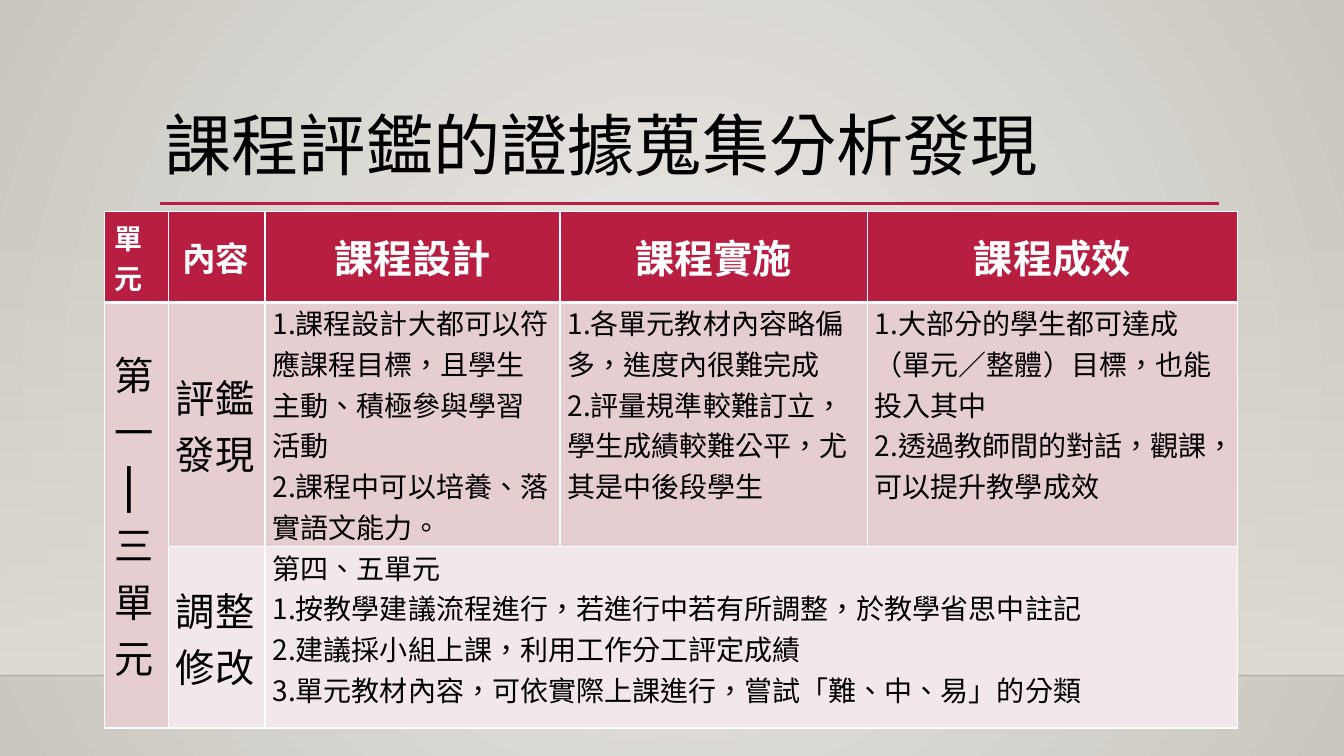
from pptx import Presentation
from pptx.dml.color import RGBColor
from pptx.enum.lang import MSO_LANGUAGE_ID
from pptx.enum.shapes import MSO_CONNECTOR, MSO_SHAPE
from pptx.enum.text import MSO_ANCHOR, PP_ALIGN
from pptx.oxml import parse_xml
from pptx.oxml.ns import nsdecls, qn
from pptx.util import Pt
from lxml.etree import SubElement

FACE = "Noto Sans CJK TC"
RED, PINK, PALE = "B71E42", "E6CDCF", "F3E8E9"


def color(code):
    return RGBColor.from_string(code)


def write(frame, lines, size, ink="000000", bold=False, align=PP_ALIGN.LEFT):
    frame.text = "\n".join(lines)
    for para in frame.paragraphs:
        para.alignment = align
        font = para.font
        font.size, font.bold, font.name = Pt(size), bold, FACE
        font.color.rgb = color(ink)
        props = para._p.pPr.find(qn("a:defRPr"))
        SubElement(props, qn("a:ea")).set("typeface", FACE)
        for run in para.runs:
            run.font.language_id = MSO_LANGUAGE_ID.TRADITIONAL_CHINESE


deck = Presentation()
deck.slide_width, deck.slide_height = Pt(960), Pt(540)
slide = deck.slides.add_slide(deck.slide_layouts[6])
shapes = slide.shapes

back = slide.background.fill
back.gradient()
for stop, code in zip(back.gradient_stops, ["ECEAE7", "CAC7C1"]):
    stop.color.rgb = color(code)
lin = next(slide.background._cSld.iter(qn("a:lin")))
lin.getparent().replace(lin, parse_xml(
    f'<a:path {nsdecls("a")} path="circle">'
    '<a:fillToRect l="50000" t="50000" r="50000" b="50000"/></a:path>'))

wall = shapes.add_shape(MSO_SHAPE.RECTANGLE, 0, Pt(159), Pt(960), Pt(323.5))
wall.shadow.inherit = False
wall.line.fill.background()
wall.fill.gradient()
wall.fill.gradient_angle = 270
for stop in wall.fill.gradient_stops:
    stop.color.rgb = color("DFDBD5")
first = next(wall._element.spPr.iter(qn("a:srgbClr")))
SubElement(first, qn("a:alpha")).set("val", "0")

for left, right, y, code, width, alpha in [
    (0, 960, 482.5, "000001", 1, 20),
    (114.5, 871, 145.5, RED, 2.5, 100),
]:
    rule = shapes.add_connector(
        MSO_CONNECTOR.STRAIGHT, Pt(left), Pt(y), Pt(right), Pt(y))
    rule.line.color.rgb = color(code)
    rule.line.width = Pt(width)
    tint = next(rule._element.spPr.iter(qn("a:srgbClr")))
    SubElement(tint, qn("a:alpha")).set("val", str(alpha * 1000))
    SubElement(rule._element.spPr, qn("a:effectLst"))

title = shapes.add_textbox(Pt(110.5), Pt(78.5), Pt(828), Pt(55.5)).text_frame
title.word_wrap = True
title.vertical_anchor = MSO_ANCHOR.MIDDLE
write(title, ["課程評鑑的證據蒐集分析發現"], 48)
title.paragraphs[0].line_spacing = 0.9

widths = [45.5, 69, 210.75, 219.5, 264.25]
heights = [65, 174.5, 129.5]
table = shapes.add_table(
    3, 5, Pt(74.75), Pt(151), Pt(sum(widths)), Pt(sum(heights))).table
for col, width in zip(table.columns, widths):
    col.width = Pt(width)
for row, height in zip(table.rows, heights):
    row.height = Pt(height)

for r, fill in enumerate([RED, PINK, PALE]):
    for c in range(5):
        cell = table.cell(r, c)
        cell.fill.solid()
        cell.fill.fore_color.rgb = color(fill)
        cell.vertical_anchor = MSO_ANCHOR.MIDDLE
        if c:
            cell.margin_left = cell.margin_right = Pt(5.4)
            cell.margin_top = cell.margin_bottom = 0
        for i, side in enumerate("LRTB"):
            thick = (r, side) in [(0, "B"), (1, "T")]
            cell._tc.tcPr.insert(i, parse_xml(
                f'<a:ln{side} {nsdecls("a")} w="{Pt(3 if thick else 1)}">'
                '<a:solidFill><a:srgbClr val="FFFFFF"/></a:solidFill>'
                f'</a:ln{side}>'))

table.cell(1, 0).merge(table.cell(2, 0))
table.cell(2, 2).merge(table.cell(2, 4))

heads = [("單元", 20), ("內容", 24), ("課程設計", 28), ("課程實施", 28), ("課程成效", 28)]
for c, (text, size) in enumerate(heads):
    align = PP_ALIGN.CENTER if c > 1 else PP_ALIGN.LEFT
    write(table.cell(0, c).text_frame, [text], size, "FFFFFF", True, align)
table.cell(0, 0).vertical_anchor = MSO_ANCHOR.TOP
table.cell(0, 1).margin_left = Pt(10)

for r, c, text in [(1, 0, "第一⎟三單元"), (1, 1, "評鑑發現"), (2, 1, "調整修改")]:
    write(table.cell(r, c).text_frame, [text], 28)

notes = {
    (1, 2): ["1.課程設計大都可以符應課程目標，且學生主動、積極參與學習活動",
             "2.課程中可以培養、落實語文能力。"],
    (1, 3): ["1.各單元教材內容略偏多，進度內很難完成",
             "2.評量規準較難訂立，學生成績較難公平，尤其是中後段學生"],
    (1, 4): ["1.大部分的學生都可達成（單元／整體）目標，也能投入其中",
             "2.透過教師間的對話，觀課，可以提升教學成效"],
    (2, 2): ["第四、五單元",
             "1.按教學建議流程進行，若進行中若有所調整，於教學省思中註記",
             "2.建議採小組上課，利用工作分工評定成績",
             "3.單元教材內容，可依實際上課進行，嘗試「難、中、易」的分類"],
}
for (r, c), lines in notes.items():
    cell = table.cell(r, c)
    cell.vertical_anchor = MSO_ANCHOR.TOP
    write(cell.text_frame, lines, 20)

deck.save("out.pptx")
